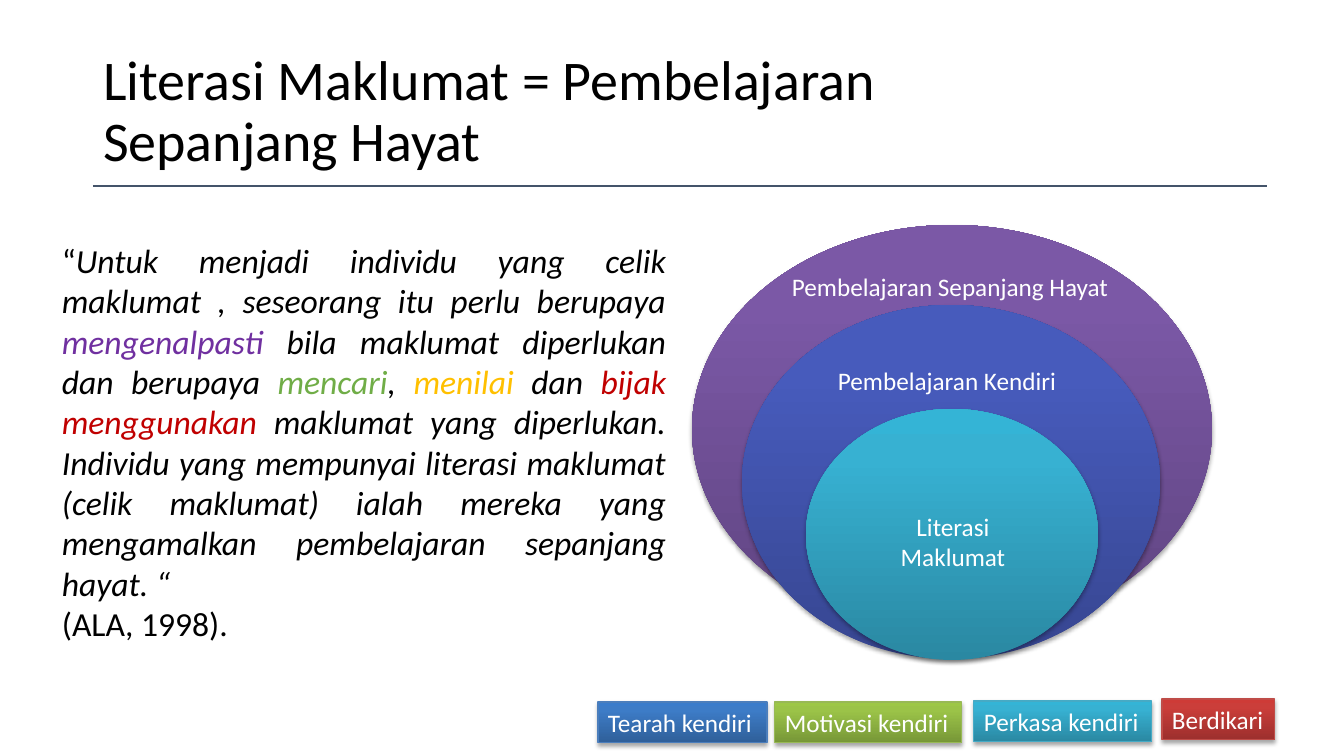
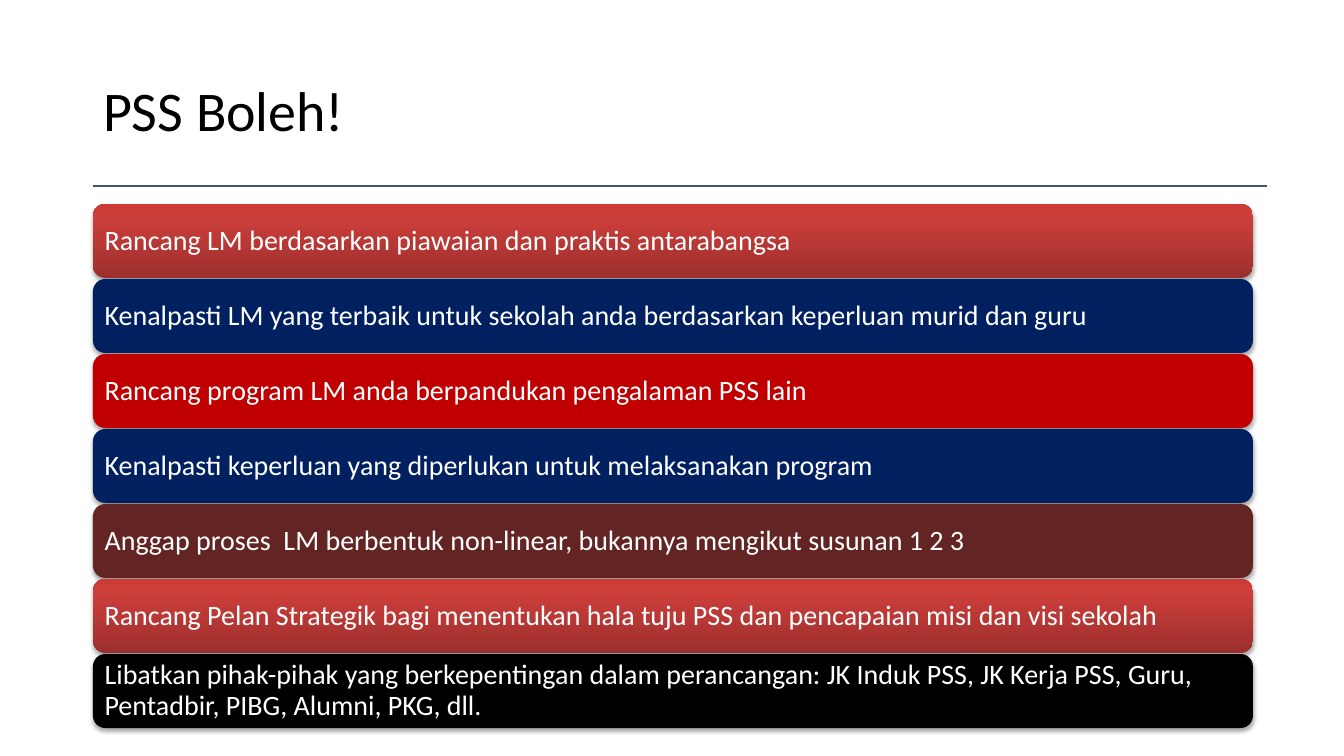
"""Builds two slides on information literacy and lifelong learning."""
from copy import deepcopy

from lxml import etree
from pptx import Presentation
from pptx import util as u
from pptx.dml.color import RGBColor
from pptx.enum import shapes, text
from pptx.oxml.ns import qn


class Theme:
    font = "Calibri"
    title_size, quote_size, bar_size, label_size = 40, 24, 20, 18
    black, white, rule = "000000", "FFFFFF", "44546A"
    navy, red, maroon = "002060", "C00000", "632523"
    violet, leaf, amber = "7030A0", "70AD47", "FFC000"
    purple_fade = ("5F4480", "7B58A6", "7C57A8")
    indigo_fade = ("374691", "475BBC", "455ABF")
    teal_fade = ("2A88A2", "37B1D2", "34B4D6")
    blue_fade = ("2F5F99", "3D7CC7", "3A7CCB")
    green_fade = ("779737", "9BC348", "9DC746")
    red_fade = ("9C2F2D", "CB3E3A", "CE3B37")
    blue_edge, green_edge, teal_edge, red_edge = "4B7EBC", "98B955", "46AAC5", "BF4C48"


PX = 914400 / 100.8


def px(*lengths):
    return [u.Emu(round(n * PX)) for n in lengths]


def add_run(p, words, size, color, italic=False):
    r = p.add_run()
    r.text = words
    r.font.name, r.font.size, r.font.italic = Theme.font, u.Pt(size), italic
    r.font.color.rgb = RGBColor.from_string(color)


prs = Presentation()
prs.slide_width, prs.slide_height = px(1344, 756)
layout = prs.slide_layouts[5]

titles = [
    ("Literasi Maklumat = Pembelajaran Sepanjang Hayat", 939),
    ("PSS Boleh!", 1159),
]
for title, width in titles:
    s = prs.slides.add_slide(layout)
    sp = s.shapes.title
    sp.left, sp.top, sp.width, sp.height = px(93, 40, width, 146)
    tf = sp.text_frame
    tf.word_wrap = True
    tf.auto_size = text.MSO_AUTO_SIZE.NONE
    tf.vertical_anchor = text.MSO_ANCHOR.MIDDLE
    p = tf.paragraphs[0]
    p.alignment, p.line_spacing = text.PP_ALIGN.LEFT, 0.9
    add_run(p, title, Theme.title_size, Theme.black)
literacy, action = prs.slides

rule = literacy.shapes.add_connector(shapes.MSO_CONNECTOR.STRAIGHT, *px(93, 186, 1267, 186))
rule.line.color.rgb = RGBColor.from_string(Theme.rule)
rule.line.width = u.Pt(2)
etree.SubElement(rule._element.spPr, qn("a:effectLst"))
layout.shapes._spTree.append(rule._element)

OVAL, RECT, ROUND = (
    shapes.MSO_SHAPE.OVAL,
    shapes.MSO_SHAPE.RECTANGLE,
    shapes.MSO_SHAPE.ROUNDED_RECTANGLE,
)
panels = [
    (literacy, OVAL, (692, 225, 520, 409), Theme.purple_fade, None, ""),
    (literacy, OVAL, (742, 305, 418, 354), Theme.indigo_fade, None, ""),
    (literacy, OVAL, (806, 409, 292, 251), Theme.teal_fade, None, ""),
    (literacy, RECT, (598, 702, 169, 41), Theme.blue_fade, Theme.blue_edge, "Tearah kendiri"),
    (literacy, RECT, (775, 702, 187, 41), Theme.green_fade, Theme.green_edge, "Motivasi kendiri"),
    (literacy, RECT, (974, 701, 178, 41), Theme.teal_fade, Theme.teal_edge, "Perkasa kendiri"),
    (literacy, RECT, (1162, 699, 113, 41), Theme.red_fade, Theme.red_edge, "Berdikari"),
]
steps = [
    (Theme.red_fade, "Rancang LM berdasarkan piawaian dan praktis antarabangsa"),
    (Theme.navy, "Kenalpasti LM yang terbaik untuk sekolah anda berdasarkan keperluan murid dan guru"),
    (Theme.red, "Rancang program LM anda berpandukan pengalaman PSS lain"),
    (Theme.navy, "Kenalpasti keperluan yang diperlukan untuk melaksanakan program"),
    (Theme.maroon, "Anggap proses  LM berbentuk non-linear, bukannya mengikut susunan 1 2 3"),
    (Theme.red_fade, "Rancang Pelan Strategik bagi menentukan hala tuju PSS dan pencapaian misi dan visi sekolah"),
    (Theme.black, "Libatkan pihak-pihak yang berkepentingan dalam perancangan: JK Induk PSS, JK Kerja PSS, "
                  "Guru, Pentadbir, PIBG, Alumni, PKG, dll."),
]
for i, (fill, step) in enumerate(steps):
    panels.append((action, ROUND, (93, 204 + 75 * i, 1160, 74), fill, None, step))

for s, shape, box, fill, edge, words in panels:
    sp = s.shapes.add_shape(shape, *px(*box))
    if isinstance(fill, str):
        sp.fill.solid()
        sp.fill.fore_color.rgb = RGBColor.from_string(fill)
    else:
        sp.fill.gradient()
        sp.fill.gradient_angle = 90
        stop_list = sp._element.spPr.find(".//" + qn("a:gsLst"))
        stop_list.insert(1, deepcopy(stop_list[0]))
        for stop, position, color in zip(sp.fill.gradient_stops, (0, 0.8, 1), fill):
            stop.position = position
            stop.color.rgb = RGBColor.from_string(color)
    if edge:
        sp.line.color.rgb = RGBColor.from_string(edge)
        sp.line.width = u.Pt(0.75)
    else:
        sp.line.fill.background()
    sp.shadow.inherit = False
    effects = sp._element.spPr.find(qn("a:effectLst"))
    shadow = etree.SubElement(effects, qn("a:outerShdw"), blurRad="40000", dist="23000",
                              dir="5400000", rotWithShape="0")
    shade = etree.SubElement(shadow, qn("a:srgbClr"), val=Theme.black)
    etree.SubElement(shade, qn("a:alpha"), val="35000")
    if words:
        tf = sp.text_frame
        p = tf.paragraphs[0]
        p.alignment = text.PP_ALIGN.LEFT
        tf.word_wrap = shape == ROUND
        if shape == ROUND:
            tf.margin_left = tf.margin_right = tf.margin_top = tf.margin_bottom = px(8)[0]
            tf.vertical_anchor = text.MSO_ANCHOR.MIDDLE
            p.line_spacing = 0.9
            add_run(p, words, Theme.bar_size, Theme.white)
        else:
            tf.vertical_anchor = text.MSO_ANCHOR.TOP
            tf.auto_size = text.MSO_AUTO_SIZE.SHAPE_TO_FIT_TEXT
            add_run(p, words, Theme.label_size, Theme.white)

LEFT, CENTER, JUSTIFY = text.PP_ALIGN.LEFT, text.PP_ALIGN.CENTER, text.PP_ALIGN.JUSTIFY
quote = [
    ("“", Theme.black, False),
    ("Untuk menjadi individu yang celik maklumat , seseorang itu perlu berupaya ", Theme.black, True),
    ("mengenalpasti ", Theme.violet, True),
    ("bila maklumat diperlukan dan berupaya ", Theme.black, True),
    ("mencari", Theme.leaf, True),
    (", ", Theme.black, True),
    ("menilai ", Theme.amber, True),
    ("dan ", Theme.black, True),
    ("bijak menggunakan ", Theme.red, True),
    ("maklumat yang diperlukan. Individu yang mempunyai literasi maklumat (celik maklumat) ialah "
     "mereka yang mengamalkan pembelajaran sepanjang hayat. “", Theme.black, True),
]
source = [("(ALA, 1998).", Theme.black, False)]
text_boxes = [
    ((828, 360, 241, 41), False, Theme.label_size,
     [(LEFT, [("Pembelajaran Kendiri", Theme.white, False)])]),
    ((874, 506, 158, 72), True, Theme.label_size,
     [(CENTER, [("Literasi Maklumat", Theme.white, False)])]),
    ((782, 266, 341, 41), False, Theme.label_size,
     [(LEFT, [("Pembelajaran Sepanjang Hayat", Theme.white, False)])]),
    ((52, 235, 624, 448), True, Theme.quote_size, [(JUSTIFY, quote), (LEFT, source)]),
]
for box, wrap, size, paragraphs in text_boxes:
    tf = literacy.shapes.add_textbox(*px(*box)).text_frame
    tf.word_wrap = wrap
    tf.auto_size = text.MSO_AUTO_SIZE.SHAPE_TO_FIT_TEXT
    for i, (align, runs) in enumerate(paragraphs):
        p = tf.add_paragraph() if i else tf.paragraphs[0]
        p.alignment = align
        for words, color, italic in runs:
            add_run(p, words, size, color, italic)

prs.save("out.pptx")
